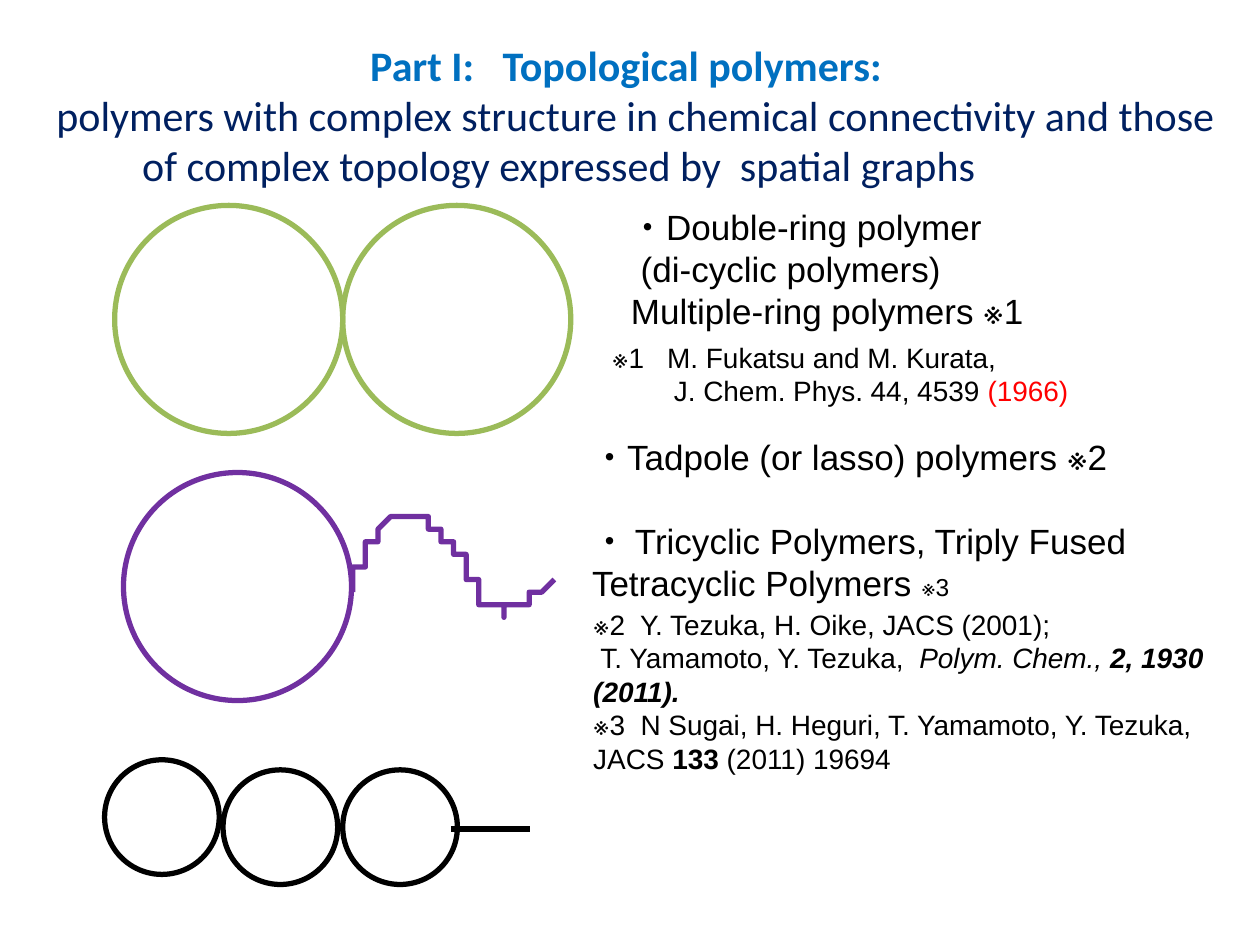
from dataclasses import dataclass, field
from typing import NamedTuple

from pptx import Presentation
from pptx.dml.color import RGBColor
from pptx.enum.shapes import MSO_CONNECTOR as Connector, MSO_SHAPE as Preset
from pptx.enum.text import MSO_ANCHOR as Anchor, PP_ALIGN as Align
from pptx.oxml.ns import qn
from pptx.util import Inches, Pt

# The grid has 100 columns and 75 rows of a tenth of an inch.
COLUMNS, ROWS = 100, 75
CELL = Inches(0.1)


@dataclass(frozen=True)
class Theme:
    heading: str = "0070C0"
    subheading: str = "002060"
    text: str = "000000"
    year: str = "FF0000"
    double_ring: str = "9BBB59"
    tadpole: str = "7030A0"
    chain: str = "000000"
    title_font: str = "Calibri"
    body_font: str = "Arial"
    title_size: int = 24
    body_size: int = 20
    reference_size: int = 16
    mark_size: int = 14
    stroke: int = 3


THEME = Theme()


class Box(NamedTuple):
    left: float
    top: float
    width: float
    height: float


class Ring(NamedTuple):
    left: float
    top: float
    diameter: float
    color: str


class Run(NamedTuple):
    text: str
    format: dict = {}
    color: str = THEME.text


@dataclass
class Line:
    runs: list[Run]
    format: dict = field(default_factory=dict)
    indent: float = 0


@dataclass
class TextBlock:
    box: Box
    font: str
    size: int
    lines: list[Line]
    anchor: Anchor = Anchor.TOP


def cells(*values: float) -> list[int]:
    return [round(value * CELL) for value in values]


def apply_format(target, values: dict) -> None:
    for name, value in values.items():
        setattr(target, name, value)


def style_stroke(shape, color: str) -> None:
    shape.line.color.rgb = RGBColor.from_string(color)
    shape.line.width = Pt(THEME.stroke)


def draw_text(slide, block: TextBlock) -> None:
    frame = slide.shapes.add_textbox(*cells(*block.box)).text_frame
    apply_format(frame, {"word_wrap": True, "vertical_anchor": block.anchor})
    for index, line in enumerate(block.lines):
        paragraph = frame.add_paragraph() if index else frame.paragraphs[0]
        apply_format(paragraph, line.format)
        if line.indent:
            paragraph._p.get_or_add_pPr().set("marL", str(cells(line.indent)[0]))
        for part in line.runs:
            run = paragraph.add_run()
            run.text = part.text
            base = {"name": block.font, "size": Pt(block.size)}
            apply_format(run.font, base | part.format)
            run.font.color.rgb = RGBColor.from_string(part.color)


def draw_ring(slide, ring: Ring) -> None:
    bounds = cells(ring.left, ring.top, ring.diameter, ring.diameter)
    shape = slide.shapes.add_shape(Preset.OVAL, *bounds)
    shape.shadow.inherit = False
    shape.fill.background()
    style_stroke(shape, ring.color)


def bezier_point(points: list[tuple], t: float) -> tuple:
    weights = ((1 - t) ** 3, 3 * t * (1 - t) ** 2, 3 * t**2 * (1 - t), t**3)
    return tuple(sum(w * p[axis] for w, p in zip(weights, points)) for axis in (0, 1))


def draw_curve(slide, points: list[tuple], color: str, steps: int = 16) -> None:
    """Draw joined cubic curves; every third point is a joint."""
    samples = [
        bezier_point(points[start:start + 4], step / steps)
        for start in range(0, len(points) - 1, 3)
        for step in range(1, steps + 1)
    ]
    builder = slide.shapes.build_freeform(*points[0], scale=CELL)
    builder.add_line_segments(samples, close=False)
    shape = builder.convert_to_shape()
    shape.shadow.inherit = False
    shape.fill.background()
    style_stroke(shape, color)


def draw_line(slide, start: tuple, end: tuple, color: str) -> None:
    line = slide.shapes.add_connector(Connector.STRAIGHT, *cells(*start, *end))
    style_stroke(line, color)
    properties = line._element.spPr
    properties.append(properties.makeelement(qn("a:effectLst"), {}))


BOLD, ITALIC = {"bold": True}, {"italic": True}
CENTERED = {"alignment": Align.CENTER}

TEXT_BLOCKS = [
    # Title
    TextBlock(Box(2.8, 2.4, 95.3, 13.4), THEME.title_font, THEME.title_size, [
        Line([Run("Part I:   Topological polymers:  ", BOLD, THEME.heading)], CENTERED),
        Line([Run("polymers with complex structure in chemical connectivity and those",
                  color=THEME.subheading)], CENTERED),
        Line([Run("of complex topology expressed by  spatial graphs",
                  color=THEME.subheading)], indent=7.5),
    ], Anchor.MIDDLE),
    # Double rings and their reference
    TextBlock(Box(49.1, 15.8, 38.6, 13.5), THEME.body_font, THEME.body_size, [
        Line([Run("・Double-ring polymer")]),
        Line([Run(" (di-cyclic polymers)")]),
        Line([Run("Multiple-ring polymers ※1")]),
    ]),
    TextBlock(Box(47.6, 26.5, 42.5, 6.4), THEME.body_font, THEME.reference_size, [
        Line([Run("※1   M. Fukatsu and M. Kurata,")]),
        Line([Run("J. Chem. Phys. 44, 4539 "), Run("(1966)", color=THEME.year)],
             indent=4.9),
    ]),
    # Tadpole and tricyclic polymers and their references
    TextBlock(Box(46, 34.1, 44.9, 14.5), THEME.body_font, THEME.body_size, [
        Line([Run("・Tadpole (or lasso) polymers ※2")]),
        Line([Run("・ Tricyclic Polymers, Triply Fused Tetracyclic Polymers "),
              Run("※3", {"size": Pt(THEME.mark_size)})], {"space_before": Pt(24)}),
    ]),
    TextBlock(Box(46.1, 47.7, 51.2, 17.5), THEME.body_font, THEME.reference_size, [
        Line([Run("※2  Y. Tezuka, H. Oike, JACS (2001);")]),
        Line([Run(" T. Yamamoto, Y. Tezuka,  "), Run("Polym. Chem., ", ITALIC),
              Run("2, 1930 (2011).", BOLD | ITALIC)]),
        Line([Run("※3  N Sugai, H. Heguri, T. Yamamoto, Y. Tezuka, JACS "),
              Run("133", BOLD), Run(" (2011) 19694")]),
    ]),
]

LARGE, SMALL = 18.1, 9.1
RINGS = [
    *(Ring(9.1 + i * LARGE, 16.3, LARGE, THEME.double_ring) for i in range(2)),
    Ring(9.8, 37.5, LARGE, THEME.tadpole),
    Ring(8.3, 60.3, SMALL, THEME.chain),
    *(Ring(17.7 + i * 9.5, 61.1, SMALL, THEME.chain) for i in range(2)),
]

TADPOLE_TAIL = [
    (28, 46.8), (28.2, 46.1), (28.9, 43.8), (29.6, 42.7),
    (30.3, 41.7), (31.1, 40.6), (32.1, 40.7),
    (33.2, 40.7), (34.7, 41.7), (35.9, 43),
    (37.1, 44.3), (38, 47.9), (39.3, 48.4),
    (40.6, 48.9), (41.8, 47.7), (43.9, 46.2),
]


def main() -> None:
    presentation = Presentation()
    size = {"slide_width": COLUMNS * CELL, "slide_height": ROWS * CELL}
    apply_format(presentation, size)
    slide = presentation.slides.add_slide(presentation.slide_layouts[6])
    for block in TEXT_BLOCKS:
        draw_text(slide, block)
    for ring in RINGS:
        draw_ring(slide, ring)
    draw_curve(slide, TADPOLE_TAIL, THEME.tadpole)
    draw_line(slide, (35.8, 65.8), (42.1, 65.8), THEME.chain)
    presentation.save("out.pptx")


if __name__ == "__main__":
    main()
